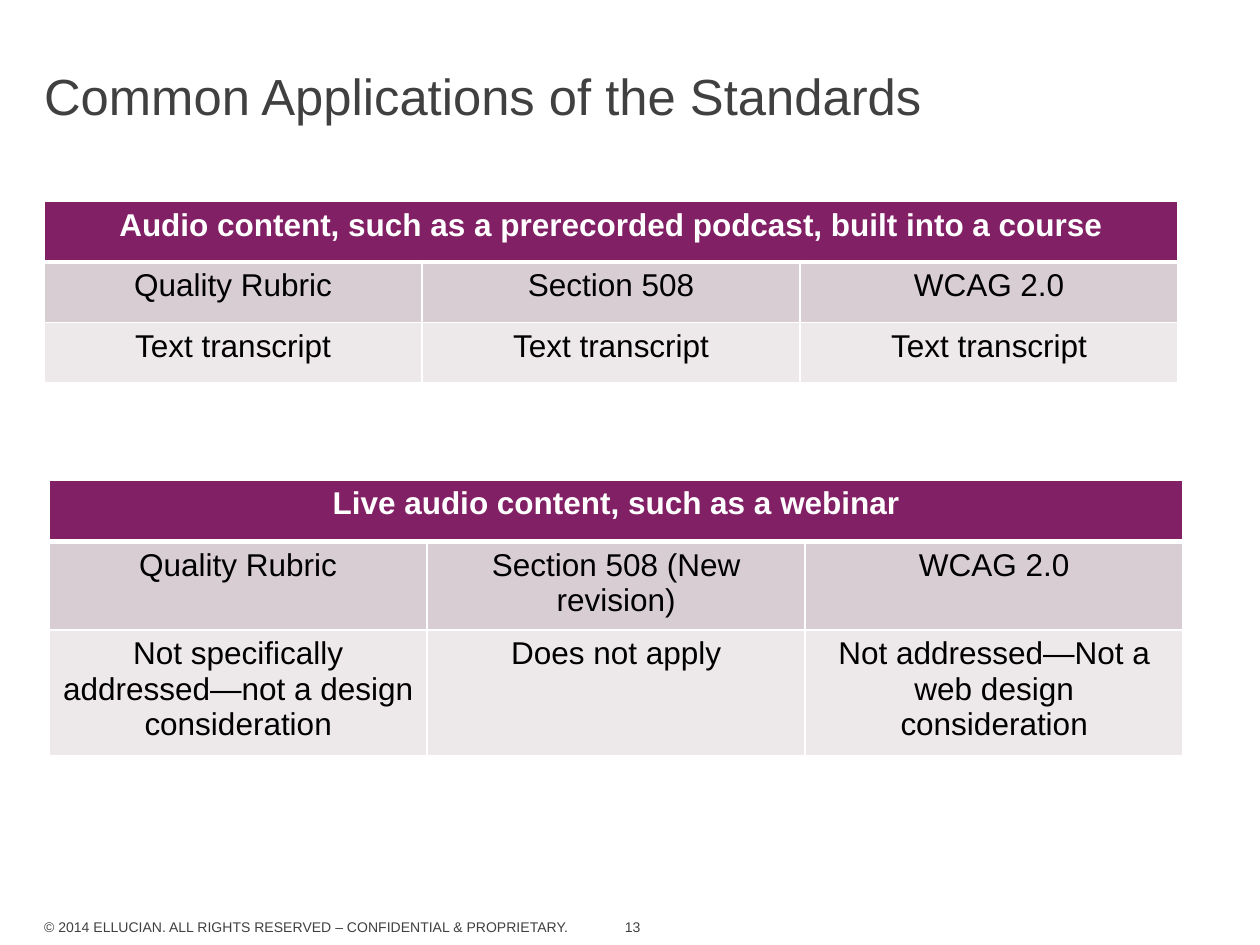
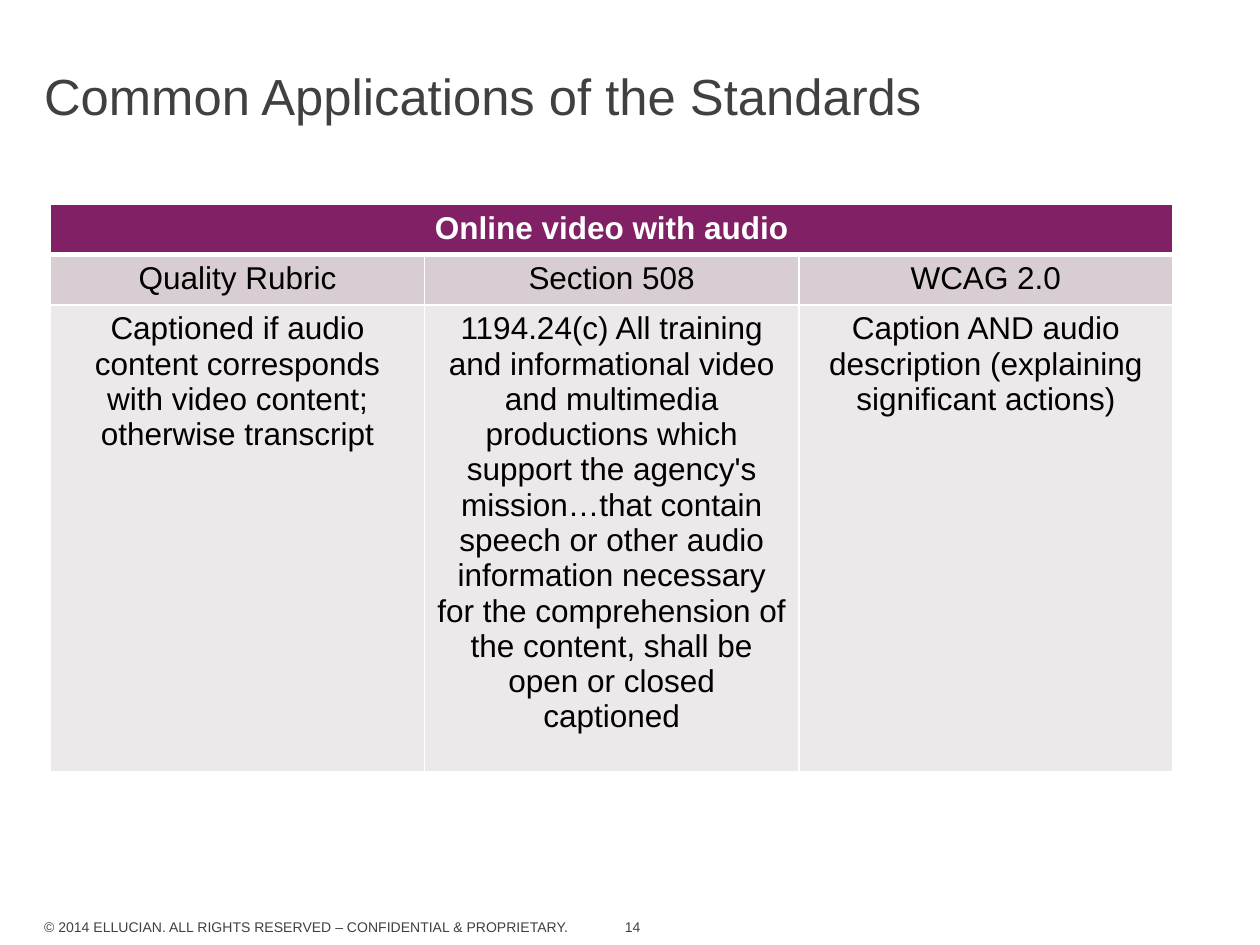
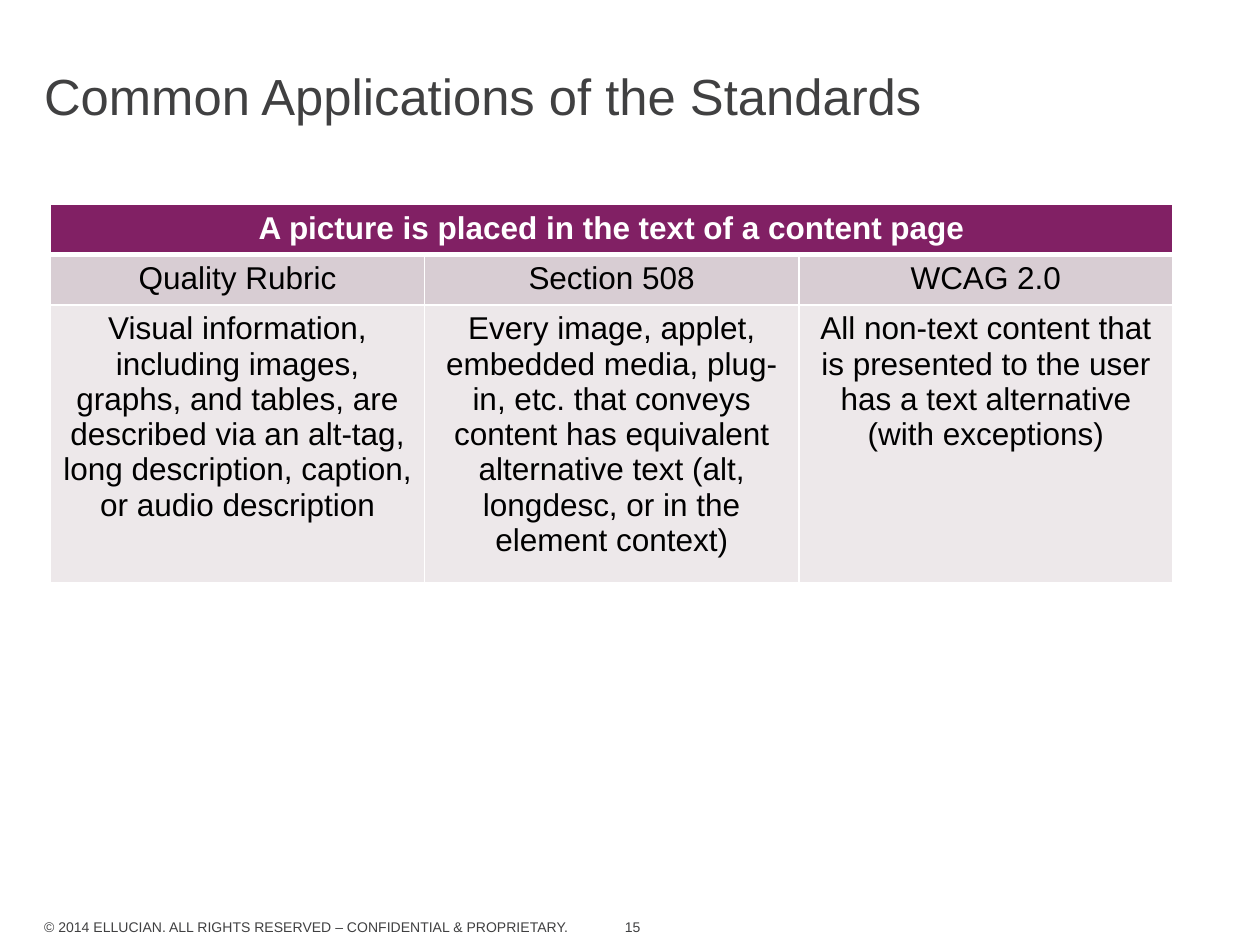
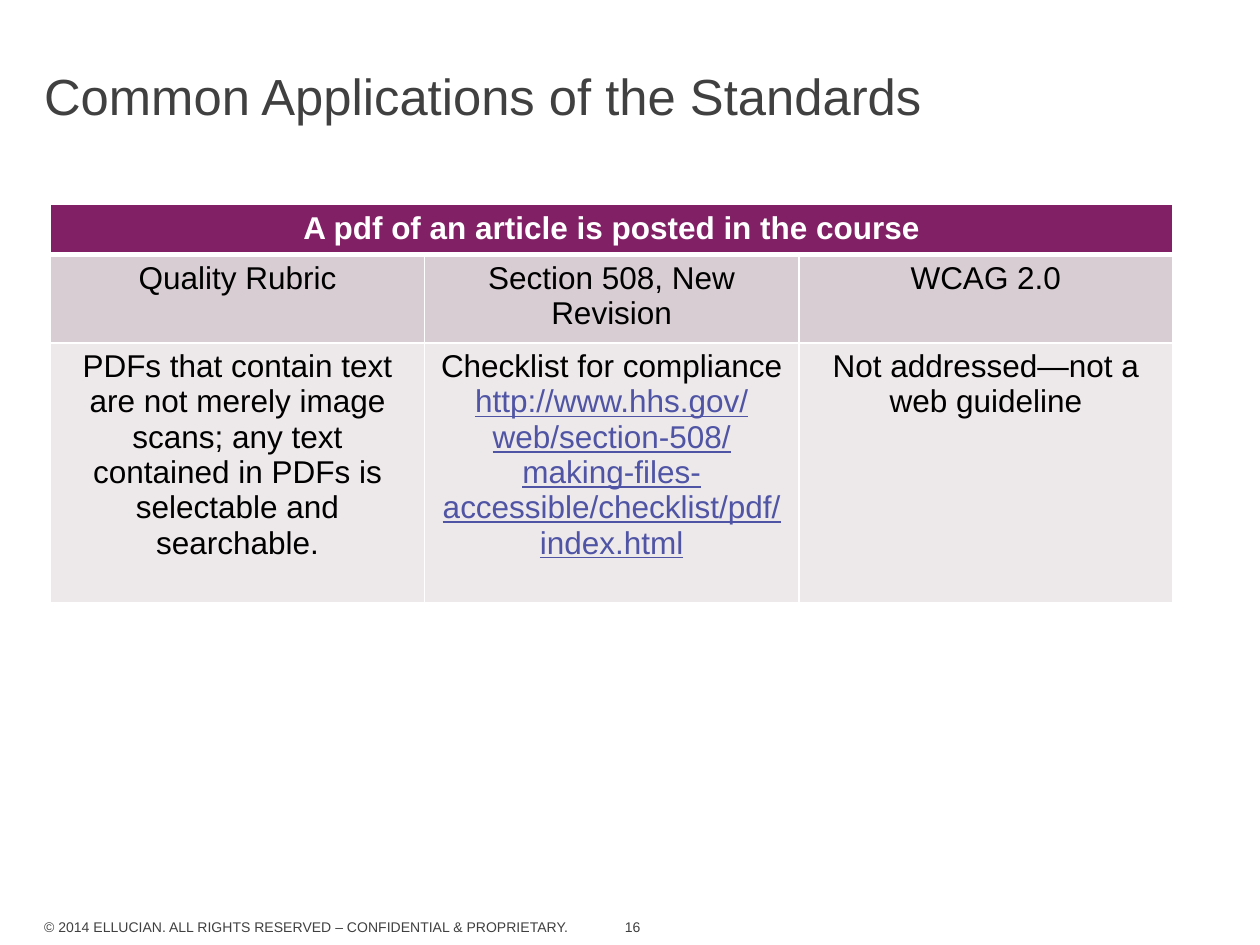
from dataclasses import dataclass

from lxml.etree import SubElement
from pptx import Presentation
from pptx.dml.color import RGBColor
from pptx.enum.text import MSO_ANCHOR, MSO_AUTO_SIZE, PP_ALIGN
from pptx.oxml.ns import qn
from pptx.slide import Slide
from pptx.table import _Cell
from pptx.text.text import TextFrame, _Paragraph
from pptx.util import Inches, Pt

PLUM = RGBColor(0x81, 0x20, 0x64)
MAUVE = RGBColor(0xD8, 0xCD, 0xD3)
PALE_MAUVE = RGBColor(0xED, 0xE8, 0xEA)
WHITE = RGBColor(0xFF, 0xFF, 0xFF)
BLACK = RGBColor(0x00, 0x00, 0x00)
CHARCOAL = RGBColor(0x40, 0x40, 0x41)
LINK_BLUE = RGBColor(0x4F, 0x54, 0xA4)

FONT_NAME = "Arial"
TITLE = "Common Applications of the Standards"
COPYRIGHT = "© 2014 ELLUCIAN. ALL RIGHTS RESERVED – CONFIDENTIAL & PROPRIETARY."
FIRST_PAGE = 13
LEFT_MARGIN = Inches(0.35)
FOOTER_TOP = Inches(7.29)
FOOTER_HEIGHT = Inches(0.13)
ROW_FILLS = (PLUM, MAUVE, PALE_MAUVE)
THIN, THICK = Pt(1), Pt(3)

TITLE_FORMAT = {"name": FONT_NAME, "size": Pt(29), "bold": False}
FOOTER_FORMAT = {"name": FONT_NAME, "size": Pt(8)}
HEADER_FORMAT = {"name": FONT_NAME, "size": Pt(18), "bold": True}
BODY_FORMAT = {"name": FONT_NAME, "size": Pt(18), "bold": False}
LINK_FORMAT = BODY_FORMAT | {"underline": True}


@dataclass(frozen=True)
class Comparison:
    heading: str
    requirements: tuple[str, str, str]
    section_name: str = "Section 508"
    left: float = 0.4
    top: float = 1.62
    column_width: float = 2.97
    row_heights: tuple[float, float, float] = (0.37, 0.37, 1.75)
    frame_height: float = 3

    @property
    def rows(self) -> tuple[tuple[str, ...], ...]:
        standards = ("Quality Rubric", self.section_name, "WCAG 2.0")
        return (self.heading, "", ""), standards, self.requirements


PAGES = (
    (
        Comparison(
            "Audio content, such as a prerecorded podcast, built into a course",
            ("Text transcript",) * 3,
            left=0.35, top=1.6, column_width=3,
            row_heights=(0.48, 0.48, 0.48), frame_height=1.43,
        ),
        Comparison(
            "Live audio content, such as a webinar",
            (
                "Not specifically addressed—not a design consideration",
                "Does not apply",
                "Not addressed—Not a web design consideration",
            ),
            section_name="Section 508 (New revision)",
            left=0.39, top=3.81, column_width=3,
            row_heights=(0.49, 0.48, 0.48), frame_height=2.19,
        ),
    ),
    (
        Comparison(
            "Online video with audio",
            (
                "Captioned if audio content corresponds with video content; "
                "otherwise transcript",
                "1194.24(c) All training and informational video and multimedia "
                "productions which support the agency's mission…that contain "
                "speech or other audio information necessary for the "
                "comprehension of the content, shall be open or closed captioned",
                "Caption AND audio description (explaining significant actions)",
            ),
            frame_height=4.5,
        ),
    ),
    (
        Comparison(
            "A picture is placed in the text of a content page",
            (
                "Visual information, including images, graphs, and tables, are "
                "described via an alt-tag, long description, caption, or audio "
                "description",
                "Every image, applet, embedded media, plug-in, etc. that conveys "
                "content has equivalent alternative text (alt, longdesc, or in "
                "the element context)",
                "All non-text content that is presented to the user has a text "
                "alternative (with exceptions)",
            ),
        ),
    ),
    (
        Comparison(
            "A pdf of an article is posted in the course",
            (
                "PDFs that contain text are not merely image scans; any text "
                "contained in PDFs is selectable and searchable.",
                "Checklist for compliance\n"
                "http://www.hhs.gov/web/section-508/making-files-accessible/"
                "checklist/pdf/index.html",
                "Not addressed—not a web guideline",
            ),
            section_name="Section 508, New Revision",
            row_heights=(0.37, 0.65, 2.06), frame_height=3.3,
        ),
    ),
)


def format_paragraph(paragraph: _Paragraph, values: dict, color: RGBColor) -> None:
    for run in paragraph.runs:
        for attribute, value in values.items():
            setattr(run.font, attribute, value)
        run.font.color.rgb = color


def set_frame(text_frame: TextFrame, wrap: bool, auto_size: MSO_AUTO_SIZE) -> None:
    values = {
        "margin_left": 0, "margin_top": 0, "margin_right": 0, "margin_bottom": 0,
        "vertical_anchor": MSO_ANCHOR.BOTTOM, "word_wrap": wrap, "auto_size": auto_size,
    }
    for attribute, value in values.items():
        setattr(text_frame, attribute, value)


def add_title(slide: Slide) -> None:
    title = slide.shapes.title
    title.left, title.top = LEFT_MARGIN, Inches(0.1)
    title.width, title.height = Inches(9.3), Inches(0.9)
    title.text = TITLE
    set_frame(title.text_frame, True, MSO_AUTO_SIZE.NONE)
    paragraph = title.text_frame.paragraphs[0]
    paragraph.alignment = PP_ALIGN.LEFT
    paragraph.line_spacing = 0.85
    format_paragraph(paragraph, TITLE_FORMAT, CHARCOAL)


def add_footer_text(slide: Slide, text: str, left: int, width: int, wrap: bool) -> None:
    text_box = slide.shapes.add_textbox(left, FOOTER_TOP, width, FOOTER_HEIGHT)
    text_box.text_frame.text = text
    set_frame(text_box.text_frame, wrap, MSO_AUTO_SIZE.SHAPE_TO_FIT_TEXT)
    format_paragraph(text_box.text_frame.paragraphs[0], FOOTER_FORMAT, CHARCOAL)


def set_borders(cell: _Cell, row_index: int) -> None:
    widths = {
        "a:lnL": THIN,
        "a:lnR": THIN,
        "a:lnT": THICK if row_index == 1 else THIN,
        "a:lnB": THICK if row_index == 0 else THIN,
    }
    properties = cell._tc.get_or_add_tcPr()
    for tag, width in widths.items():
        line = SubElement(properties, qn(tag), w=str(width))
        fill = SubElement(line, qn("a:solidFill"))
        SubElement(fill, qn("a:srgbClr"), val=str(WHITE))


def fill_cell(cell: _Cell, text: str, row_index: int) -> None:
    set_borders(cell, row_index)
    cell.fill.solid()
    cell.fill.fore_color.rgb = ROW_FILLS[row_index]
    cell.text = text
    for paragraph in cell.text_frame.paragraphs:
        paragraph.alignment = PP_ALIGN.CENTER
        if row_index == 0:
            format_paragraph(paragraph, HEADER_FORMAT, WHITE)
        elif paragraph.text.startswith("http"):
            format_paragraph(paragraph, LINK_FORMAT, LINK_BLUE)
        else:
            format_paragraph(paragraph, BODY_FORMAT, BLACK)


def add_comparison(slide: Slide, comparison: Comparison) -> None:
    rows = comparison.rows
    column_count = len(rows[0])
    frame = slide.shapes.add_table(
        len(rows), column_count, Inches(comparison.left), Inches(comparison.top),
        Inches(comparison.column_width * column_count), Inches(comparison.frame_height),
    )
    table = frame.table
    for row, height in zip(table.rows, comparison.row_heights):
        row.height = Inches(height)
    frame.height = Inches(comparison.frame_height)
    table.cell(0, 0).merge(table.cell(0, column_count - 1))
    for row_index, texts in enumerate(rows):
        for column_index, text in enumerate(texts):
            fill_cell(table.cell(row_index, column_index), text, row_index)


def main() -> None:
    presentation = Presentation()
    presentation.slide_width, presentation.slide_height = Inches(10), Inches(7.5)
    title_only = presentation.slide_layouts[5]
    for page_number, comparisons in enumerate(PAGES, FIRST_PAGE):
        slide = presentation.slides.add_slide(title_only)
        add_footer_text(slide, str(page_number), Inches(4.96), Inches(0.14), False)
        add_footer_text(slide, COPYRIGHT, LEFT_MARGIN, Inches(4.87), True)
        add_title(slide)
        for comparison in comparisons:
            add_comparison(slide, comparison)
    presentation.save("out.pptx")


if __name__ == "__main__":
    main()
